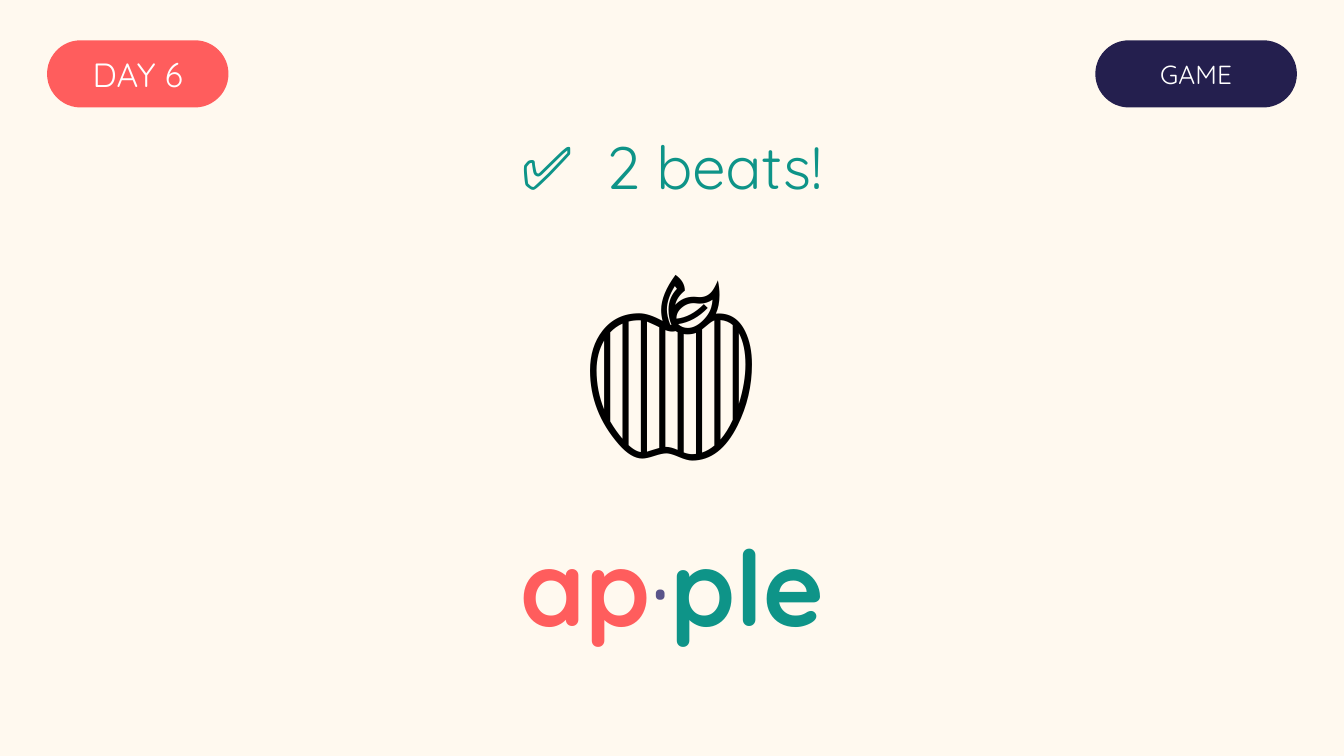
"""Build a syllable game slide that shows a word split into its beats."""
from dataclasses import dataclass

import pptx
import pptx.dml.color
import pptx.enum.shapes
import pptx.enum.text
import pptx.util

Inches = pptx.util.Inches
MIDDLE = pptx.enum.text.MSO_ANCHOR.MIDDLE
TOP = pptx.enum.text.MSO_ANCHOR.TOP


@dataclass(frozen=True)
class Theme:
    """Colours, fonts and type sizes of the slide."""
    cream: str = "FFF9EF"
    coral: str = "FF5D5D"
    navy: str = "241F4E"
    teal: str = "0E9488"
    violet: str = "5A548A"
    white: str = "FFFFFF"
    black: str = "000000"
    font: str = "Quicksand"
    emoji_font: str = "Calibri"
    day: int = 18
    tag: int = 14
    answer: int = 32
    emoji: int = 105
    word: int = 56


THEME = Theme()


def rgb(color):
    """Return a colour object for a hex string."""
    return pptx.dml.color.RGBColor.from_string(color)


def write_runs(tf, parts, size, font=THEME.font, anchor=MIDDLE):
    """Write one centred line from (text, colour, bold) parts."""
    tf.word_wrap = True
    tf.vertical_anchor = anchor
    p = tf.paragraphs[0]
    p.alignment = pptx.enum.text.PP_ALIGN.CENTER
    for text, color, bold in parts:
        r = p.add_run()
        r.text = text
        r.font.name = font
        r.font.size = pptx.util.Pt(size)
        r.font.bold = bold
        r.font.color.rgb = rgb(color)


def add_pill(slide, box, text, fill, size):
    """Add a fully rounded label that fills the box."""
    sp = slide.shapes.add_shape(
        pptx.enum.shapes.MSO_SHAPE.ROUNDED_RECTANGLE, *map(Inches, box))
    sp.adjustments[0] = 0.5
    sp.shadow.inherit = False
    sp.fill.solid()
    sp.fill.fore_color.rgb = rgb(fill)
    sp.line.fill.background()
    tf = sp.text_frame
    tf.margin_left = tf.margin_right = tf.margin_top = tf.margin_bottom = 0
    write_runs(tf, [(text, THEME.white, False)], size)


def add_line(slide, box, parts, size, **style):
    """Add a centred line of text in the box."""
    tb = slide.shapes.add_textbox(*map(Inches, box))
    write_runs(tb.text_frame, parts, size, **style)


def add_header(slide, box):
    """Place the day label at the left end of the box and the game label at the right."""
    left, top, width, height = box
    day_width, game_width = 1.35, 1.5
    add_pill(slide, (left, top, day_width, height), "DAY 6", THEME.coral, THEME.day)
    add_pill(slide, (left + width - game_width, top, game_width, height),
             "GAME", THEME.navy, THEME.tag)


def add_word_card(slide, box):
    """Stack the answer, the emoji and the split word in the box."""
    left, top, width, height = box
    add_line(slide, (left, top, width, 0.62),
             [("✅  2 beats!", THEME.teal, False)], THEME.answer)
    add_line(slide, (left, top + 0.73, width, 1.6),
             [("🍎", THEME.black, False)], THEME.emoji,
             font=THEME.emoji_font, anchor=TOP)
    word_height = 0.9
    add_line(slide, (left, top + height - word_height, width, word_height),
             [("ap", THEME.coral, True), ("·", THEME.violet, False),
              ("ple", THEME.teal, True)], THEME.word)


def main():
    """Build and save the slide."""
    prs = pptx.Presentation()
    prs.slide_width = Inches(10)
    prs.slide_height = prs.slide_width * 9 // 16
    slide = prs.slides.add_slide(prs.slide_layouts[6])
    slide.background.fill.solid()
    slide.background.fill.fore_color.rgb = rgb(THEME.cream)
    add_header(slide, (0.35, 0.3, 9.3, 0.5))
    add_word_card(slide, (0, 0.92, 10, 3.88))
    prs.save("out.pptx")


if __name__ == "__main__":
    main()
